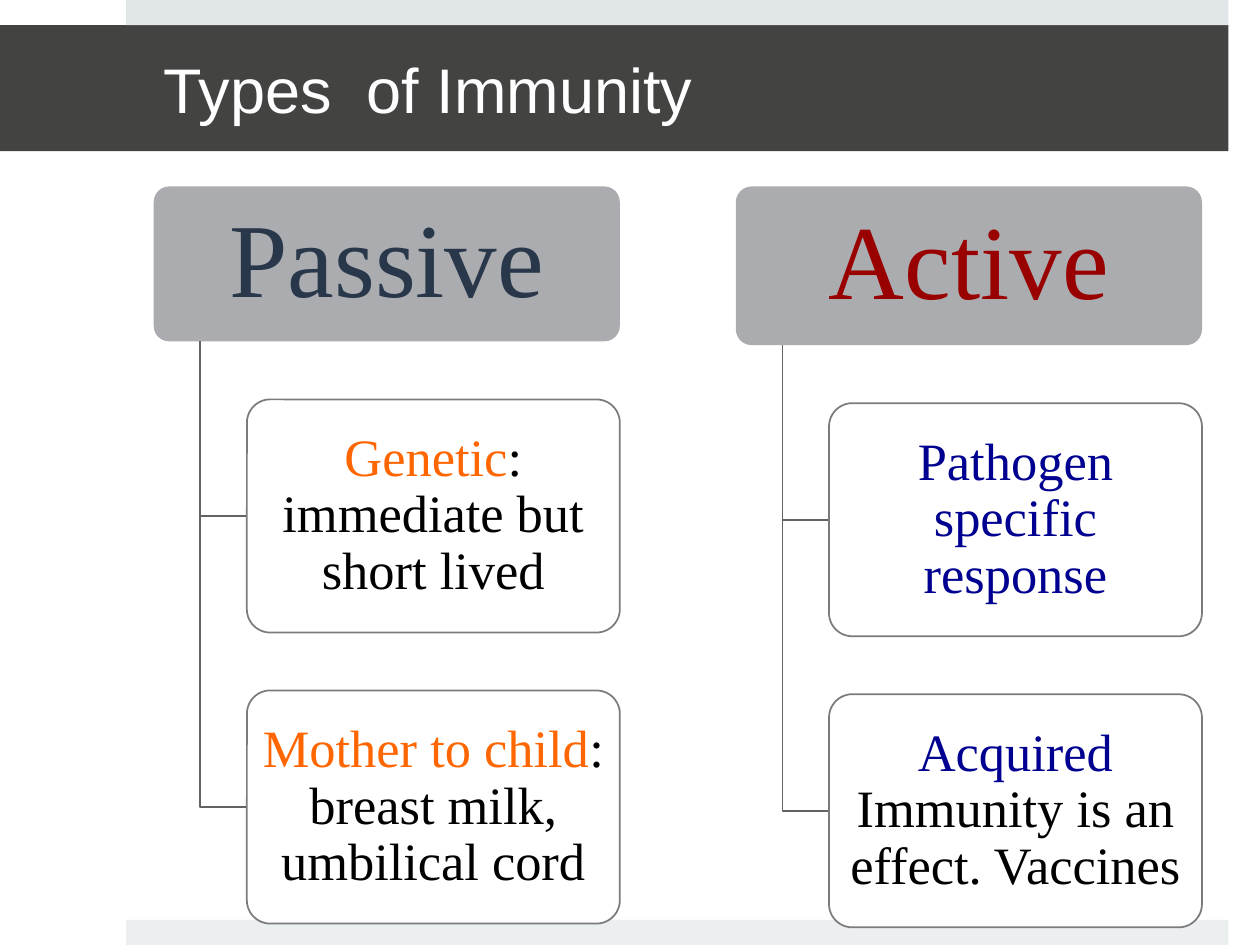
"""Build the slide that compares passive and active immunity."""
import dataclasses

import pptx
import pptx.dml.color
import pptx.enum.shapes
import pptx.enum.text
import pptx.oxml
import pptx.oxml.ns
import pptx.util

Inches = pptx.util.Inches


@dataclasses.dataclass(frozen=True)
class Theme:
    title_font: str = "Arial"
    body_font: str = "Times New Roman"
    title_size: int = 36
    header_size: int = 60
    item_size: int = 30
    top_band: str = "E1E7E8"
    bottom_band: str = "EBEFF0"
    title_fill: str = "434342"
    header_fill: str = "ABACB0"
    white: str = "FFFFFF"
    black: str = "000000"
    border: str = "797B7E"
    branch: str = "616365"
    passive: str = "28374A"
    active: str = "990000"
    orange: str = "FF6600"
    navy: str = "000090"


THEME = Theme()
TREE_TOP = 1.48
HEADER_WIDTH = 3.7
INDENT = 0.37
ITEM_WIDTH = 2.96
ITEM_HEIGHT = 1.85
GAP = 0.46

TREES = [
    (1.22, 1.23, "Passive", THEME.passive, [
        [("Genetic", THEME.orange), (": immediate but short lived", THEME.black)],
        [("Mother to child", THEME.orange), (": breast milk, umbilical cord", THEME.black)],
    ]),
    (5.84, 1.26, "Active", THEME.active, [
        [("Pathogen specific response", THEME.navy)],
        [("Acquired", THEME.navy), (" Immunity is an effect. Vaccines", THEME.black)],
    ]),
]


def paint(shape, color):
    shape.fill.solid()
    shape.fill.fore_color.rgb = pptx.dml.color.RGBColor.from_string(color)


def outline(shape, color):
    shape.line.color.rgb = pptx.dml.color.RGBColor.from_string(color)
    shape.line.width = pptx.util.Pt(1)


def style_span(span, font, size, color):
    span.font.name = font
    span.font.size = pptx.util.Pt(size)
    span.font.color.rgb = pptx.dml.color.RGBColor.from_string(color)


def set_frame(frame, left, top, right, bottom):
    frame.word_wrap = True
    frame.auto_size = pptx.enum.text.MSO_AUTO_SIZE.NONE
    frame.vertical_anchor = pptx.enum.text.MSO_ANCHOR.MIDDLE
    frame.margin_left, frame.margin_top = Inches(left), Inches(top)
    frame.margin_right, frame.margin_bottom = Inches(right), Inches(bottom)


def add_box(page, kind, left, top, width, height, color):
    box = page.shapes.add_shape(
        kind, Inches(left), Inches(top), Inches(width), Inches(height))
    box.shadow.inherit = False
    paint(box, color)
    box.line.fill.background()
    return box


def add_band(page, top, color):
    add_box(page, pptx.enum.shapes.MSO_SHAPE.RECTANGLE, 1, top, 8.75, 0.2, color)


def add_card(page, left, top, width, height, color, spans, size, margin):
    card = add_box(page, pptx.enum.shapes.MSO_SHAPE.ROUNDED_RECTANGLE,
                   left, top, width, height, color)
    card.adjustments[0] = 0.1
    set_frame(card.text_frame, margin, margin * 2 / 3, margin, margin * 2 / 3)
    para = card.text_frame.paragraphs[0]
    para.alignment = pptx.enum.text.PP_ALIGN.CENTER
    para.line_spacing = 0.9
    for text, span_color in spans:
        span = para.add_run()
        span.text = text
        style_span(span, THEME.body_font, size, span_color)
    return card


def add_item(page, left, top, spans):
    card = add_card(page, left, top, ITEM_WIDTH, ITEM_HEIGHT, THEME.white,
                    spans, THEME.item_size, 0.06)
    outline(card, THEME.border)
    color = card.fill._xPr.find(".//" + pptx.oxml.ns.qn("a:srgbClr"))
    color.append(pptx.oxml.parse_xml(
        f'<a:alpha {pptx.oxml.ns.nsdecls("a")} val="90000"/>'))


def add_branch(page, left, top, bottom):
    builder = page.shapes.build_freeform(Inches(left), Inches(top))
    builder.add_line_segments(
        [(Inches(left), Inches(bottom)), (Inches(left + INDENT), Inches(bottom))],
        close=False)
    branch = builder.convert_to_shape()
    branch.shadow.inherit = False
    branch.fill.background()
    outline(branch, THEME.branch)


def add_tree(page, left, header_height, name, color, items):
    add_card(page, left, TREE_TOP, HEADER_WIDTH, header_height, THEME.header_fill,
             [(name, color)], THEME.header_size, 0.12)
    header_bottom = TREE_TOP + header_height
    for index, spans in enumerate(items):
        top = header_bottom + GAP + index * (ITEM_HEIGHT + GAP)
        add_branch(page, left + INDENT, header_bottom, top + ITEM_HEIGHT / 2)
        add_item(page, left + 2 * INDENT, top, spans)


def set_title(page, text):
    title = page.shapes.title
    title.left, title.top = Inches(0), Inches(0.2)
    title.width, title.height = Inches(9.75), Inches(1)
    paint(title, THEME.title_fill)
    set_frame(title.text_frame, 1.3, 0.05, 0.3, 0.05)
    title.text_frame.text = text
    para = title.text_frame.paragraphs[0]
    para.alignment = pptx.enum.text.PP_ALIGN.LEFT
    style_span(para.runs[0], THEME.title_font, THEME.title_size, THEME.white)


def main():
    deck = pptx.Presentation()
    deck.slide_width, deck.slide_height = Inches(10), Inches(7.5)
    page = deck.slides.add_slide(deck.slide_layouts.get_by_name("Title Only"))
    add_band(page, 0, THEME.top_band)
    add_band(page, 7.3, THEME.bottom_band)
    set_title(page, "Types  of Immunity")
    for tree in TREES:
        add_tree(page, *tree)
    deck.save("out.pptx")


if __name__ == "__main__":
    main()
